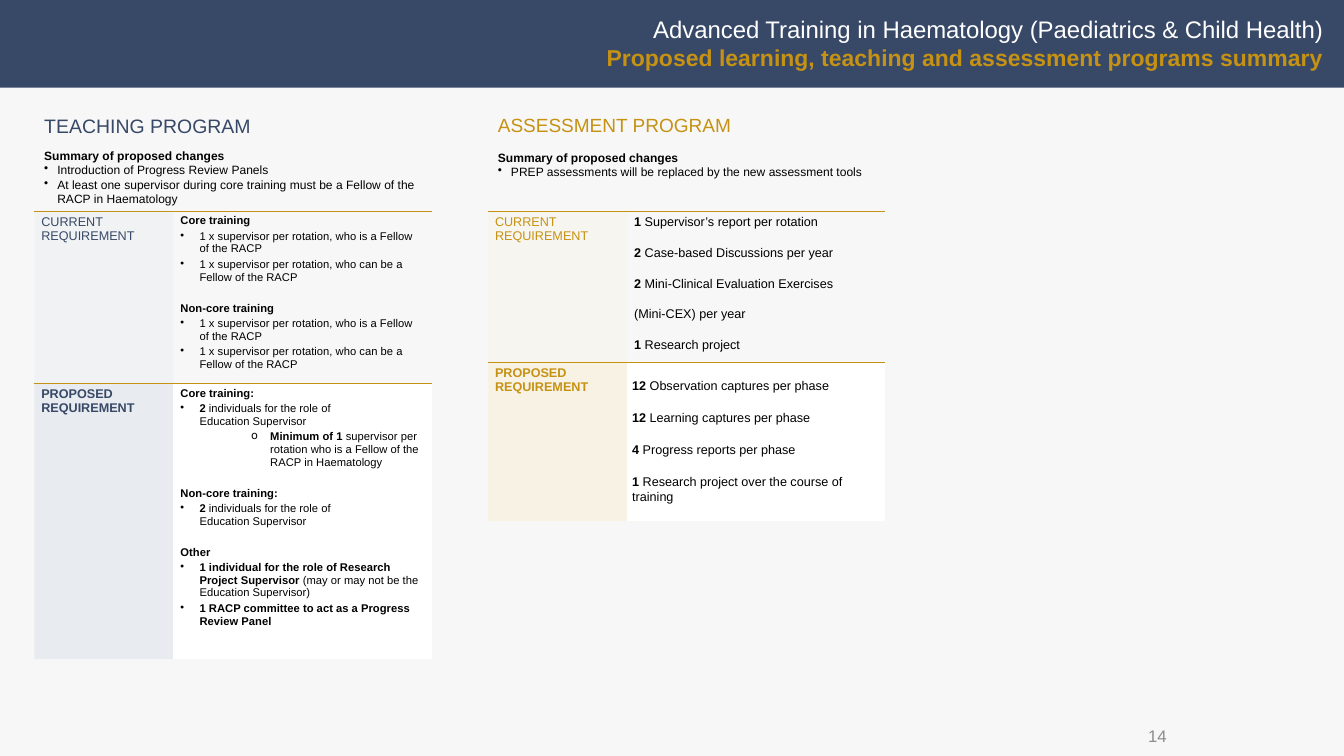
"""Build the slide summarising the teaching and assessment programs."""
import pptx
import pptx.dml.color
import pptx.enum.shapes
import pptx.enum.text
import pptx.oxml
import pptx.oxml.ns
import pptx.util

RGBColor = pptx.dml.color.RGBColor
Inches = pptx.util.Inches
Pt = pptx.util.Pt
Anchor = pptx.enum.text.MSO_ANCHOR
Align = pptx.enum.text.PP_ALIGN

NAVY = RGBColor(0x38, 0x49, 0x67)
GOLD = RGBColor(0xC6, 0x92, 0x14)
PALE_BLUE = RGBColor(0xD2, 0xD9, 0xE6)
PALE_GOLD = RGBColor(0xFA, 0xEC, 0xCA)
PAPER = RGBColor(0xF7, 0xF7, 0xF7)
WHITE = RGBColor(0xFF, 0xFF, 0xFF)
GREY = RGBColor(0x8C, 0x8C, 0x8C)
BLACK = RGBColor(0, 0, 0)

WIDTH, HEIGHT = 13.33, 7.5
LEFT, STEP = 0.34, 4.5
TABLE_TOP = 2.09
COLUMNS = (1.38, 2.56)
BANNER_HEIGHT = 0.87
NO_STYLE = "{2D5ABB26-0587-4C30-8999-92F81FD0307C}"
BULLETS = {"bullet": ("•", 0.19, 0), "sub": ("o", 0.89, 1)}
HANGING = 0.19

TITLE = "Advanced Training in Haematology (Paediatrics & Child Health)"
SUBTITLE = "**Proposed learning, teaching and assessment programs summary**"
SUMMARY = ("plain", "**Summary of proposed changes**")
LABELS = ("CURRENT REQUIREMENT", "**PROPOSED REQUIREMENT**")
SUPERVISORS = [
    ("bullet", "1 x supervisor per rotation, who is a Fellow of the RACP"),
    ("bullet", "1 x supervisor per rotation, who can be a Fellow of the RACP"),
]
EDUCATORS = ("bullet", "**2** individuals for the role of \nEducation Supervisor")

PROGRAMS = [
    {
        "name": "TEACHING PROGRAM", "name_size": 13.9, "name_width": 3.06,
        "color": NAVY, "tint": PALE_BLUE, "rows": (1.71, 2.74),
        "summary_place": (1.42, 0.68),
        "changes": [
            "Introduction of Progress Review Panels",
            "At least one supervisor during core training must be a Fellow "
            "of the RACP in Haematology",
        ],
        "formats": [{"size": 8, "after": 2, "gap": 11.2}] * 2,
        "requirements": [
            [("plain", "**Core training**"), *SUPERVISORS,
             ("section", "**Non-core training**"), *SUPERVISORS],
            [("plain", "**Core training:**"), EDUCATORS,
             ("sub", "**Minimum of 1** supervisor per rotation who is a "
                     "Fellow of the RACP in Haematology"),
             ("section", "**Non-core training:**"), EDUCATORS,
             ("section", "**Other**"),
             ("bullet", "**1 individual for the role of Research Project "
                        "Supervisor** (may or may not be the Education Supervisor)"),
             ("bullet", "**1 RACP committee to act as a Progress Review Panel**")],
        ],
    },
    {
        "name": "ASSESSMENT PROGRAM", "name_size": 13.6, "name_width": 2.57,
        "color": GOLD, "tint": PALE_GOLD, "rows": (1.49, 1.58),
        "summary_place": (1.44, 0.39),
        "changes": ["PREP assessments will be replaced by the new assessment tools"],
        "formats": [
            {"size": 9, "before": 6, "after": 6},
            {"size": 9, "before": 6, "after": 6, "spacing": 1.07,
             "anchor": Anchor.MIDDLE, "margins": (0.05, 0)},
        ],
        "requirements": [
            [("plain", "**1** Supervisor’s report per rotation"),
             ("plain", "**2** Case-based Discussions per year"),
             ("plain", "**2** Mini-Clinical Evaluation Exercises"),
             ("plain", "(Mini-CEX) per year"),
             ("plain", "**1** Research project")],
            [("plain", "**12** Observation captures per phase"),
             ("plain", "**12** Learning captures per phase"),
             ("plain", "**4** Progress reports per phase"),
             ("plain", "**1** Research project over the course of training")],
        ],
    },
]


def add_bullet(para, mark, indent, hanging, level):
    para.level = level
    properties = para._p.get_or_add_pPr()
    properties.set("marL", str(Inches(indent)))
    properties.set("indent", str(-Inches(hanging)))
    bullet = pptx.oxml.ns.qn("a:buChar")
    properties.append(properties.makeelement(bullet, {"char": mark}))


def write(frame, lines, size=9, color=BLACK, align=Align.LEFT, before=0, after=0,
          gap=0, spacing=None, hanging=HANGING):
    """Fill a text frame; double asterisks switch bold on and off."""
    frame.word_wrap = True
    for number, (kind, text) in enumerate(lines):
        para = frame.add_paragraph() if number else frame.paragraphs[0]
        if kind in BULLETS:
            mark, indent, level = BULLETS[kind]
            add_bullet(para, mark, indent - HANGING + hanging, hanging, level)
        para.alignment = align
        if number:
            para.space_before = Pt(gap if kind == "section" else before)
        para.space_after = Pt(after)
        if spacing:
            para.line_spacing = spacing
        for order, part in enumerate(text.split("**")):
            for row, piece in enumerate(part.split("\n")):
                if row:
                    para.add_line_break()
                if piece:
                    span = para.add_run()
                    span.text = piece
                    span.font.name = "Arial"
                    span.font.size = Pt(size)
                    span.font.bold = order % 2 == 1
                    span.font.color.rgb = color


def add_text(page, place, lines, anchor=Anchor.TOP, **style):
    box = page.shapes.add_textbox(*map(Inches, place))
    box.text_frame.vertical_anchor = anchor
    write(box.text_frame, lines, **style)
    return box


def fill_cell(cell, lines, fill=None, alpha=100, anchor=Anchor.TOP,
              margins=(0.07, 0.04), **style):
    cell.margin_left = cell.margin_right = Inches(margins[0])
    cell.margin_top = cell.margin_bottom = Inches(margins[1])
    cell.vertical_anchor = anchor
    write(cell.text_frame, lines, **style)
    properties = cell._tc.get_or_add_tcPr()
    if fill is None:
        cell.fill.background()
    else:
        cell.fill.solid()
        cell.fill.fore_color.rgb = fill
        if alpha < 100:
            tone = properties.find(".//" + pptx.oxml.ns.qn("a:srgbClr"))
            opacity = pptx.oxml.ns.qn("a:alpha")
            tone.append(tone.makeelement(opacity, {"val": str(alpha * 1000)}))
    properties.insert(0, pptx.oxml.parse_xml(
        f'<a:lnT {pptx.oxml.ns.nsdecls("a")} w="{Pt(0.25)}"><a:solidFill>'
        f'<a:srgbClr val="{GOLD}"/></a:solidFill></a:lnT>'))


def add_program(page, left, program):
    color = program["color"]
    add_text(page, (left, 1.08, program["name_width"], 0.33),
             [("plain", program["name"])], size=program["name_size"], color=color)
    top, height = program["summary_place"]
    add_text(page, (left, top, sum(COLUMNS), height),
             [SUMMARY] + [("bullet", change) for change in program["changes"]],
             size=8.6, hanging=0.13)
    rows = program["rows"]
    frame = page.shapes.add_table(len(rows), len(COLUMNS), *map(
        Inches, (left, TABLE_TOP, sum(COLUMNS), sum(rows))))
    table = frame.table
    table.first_row = table.horz_banding = False
    table._tbl.tblPr.find(pptx.oxml.ns.qn("a:tableStyleId")).text = NO_STYLE
    for column, width in zip(table.columns, COLUMNS):
        column.width = Inches(width)
    for index, (height, fill, alpha) in enumerate(zip(rows, (None, WHITE), (15, 40))):
        table.rows[index].height = Inches(height)
        fill_cell(table.cell(index, 0), [("plain", LABELS[index])],
                  fill=program["tint"], alpha=alpha, color=color)
        fill_cell(table.cell(index, 1), program["requirements"][index],
                  fill=fill, **program["formats"][index])


def main():
    deck = pptx.Presentation()
    deck.slide_width, deck.slide_height = Inches(WIDTH), Inches(HEIGHT)
    page = deck.slides.add_slide(deck.slide_layouts[6])
    page.background.fill.solid()
    page.background.fill.fore_color.rgb = PAPER
    for index, program in enumerate(PROGRAMS):
        add_program(page, LEFT + index * STEP, program)
    banner = page.shapes.add_shape(pptx.enum.shapes.MSO_SHAPE.RECTANGLE, 0, 0,
                                   deck.slide_width, Inches(BANNER_HEIGHT))
    banner.shadow.inherit = False
    banner.fill.solid()
    banner.fill.fore_color.rgb = NAVY
    banner.line.fill.background()
    heading = add_text(page, (5.37, 0.1, 7.85, 0.67),
                       [("plain", TITLE), ("plain", SUBTITLE)],
                       size=17.1, color=WHITE, align=Align.RIGHT)
    for span in heading.text_frame.paragraphs[1].runs:
        span.font.size = Pt(16.4)
        span.font.color.rgb = GOLD
    add_text(page, (9.42, 7.1, 2.25, 0.4), [("plain", "14")], size=12, color=GREY,
             align=Align.RIGHT, anchor=Anchor.MIDDLE)
    deck.save("out.pptx")


if __name__ == "__main__":
    main()
